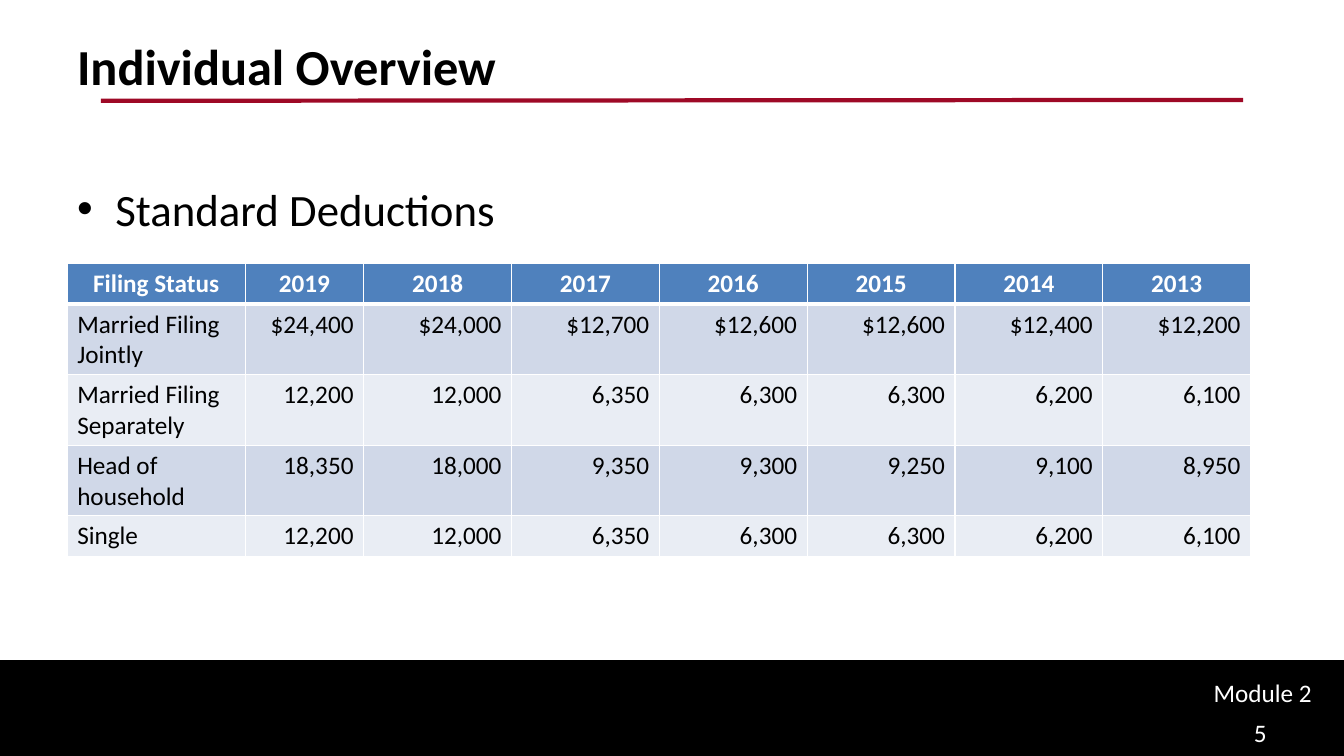
"""Builds the Individual Overview slide with its standard deduction table."""
import dataclasses

import pptx
import pptx.dml.color
import pptx.enum.shapes
import pptx.enum.text
import pptx.oxml
import pptx.oxml.ns
import pptx.util

GRID_COLUMNS, GRID_ROWS = 160, 90
SLIDE_WIDTH, SLIDE_HEIGHT = pptx.util.Inches(13.33), pptx.util.Inches(7.5)
FONT = "Calibri"
BLACK, WHITE, CRIMSON, HEADER_BLUE = "000000", "FFFFFF", "9E0926", "4F81BD"
BANDS = ("D0D8E8", "E9EDF4")
ALIGN = pptx.enum.text.PP_ALIGN

DEDUCTIONS = (
    ("Filing Status", "2019", "2018", "2017", "2016", "2015", "2014", "2013"),
    ("Married Filing Jointly", "$24,400", "$24,000", "$12,700", "$12,600", "$12,600", "$12,400", "$12,200"),
    ("Married Filing Separately", "12,200", "12,000", "6,350", "6,300", "6,300", "6,200", "6,100"),
    ("Head of household", "18,350", "18,000", "9,350", "9,300", "9,250", "9,100", "8,950"),
    ("Single", "12,200", "12,000", "6,350", "6,300", "6,300", "6,200", "6,100"),
)
TABLE_COLUMNS = (21.2, 14.1) + (17.6,) * 6
TABLE_ROW = 4.9


@dataclasses.dataclass(frozen=True)
class Area:
    column: float
    row: float
    columns: float
    rows: float

    def box(self) -> tuple[int, int, int, int]:
        return across(self.column), down(self.row), across(self.columns), down(self.rows)


@dataclasses.dataclass(frozen=True)
class Label:
    text: str
    area: Area
    size: float
    colour: str = BLACK
    bold: bool = False
    bullet: bool = False


LABELS = (
    Label("Individual Overview", Area(8, 3.6, 144, 15), 36, bold=True),
    Label("Standard Deductions", Area(8, 21, 144, 51.5), 32, bullet=True),
    Label("Module 2", Area(143.3, 80, 15.8, 4.8), 18, WHITE),
    Label("5", Area(148.1, 84.8, 10.9, 5.2), 18, WHITE),
)


def across(columns: float) -> int:
    return round(SLIDE_WIDTH * columns / GRID_COLUMNS)


def down(rows: float) -> int:
    return round(SLIDE_HEIGHT * rows / GRID_ROWS)


def paint(colour_format, colour: str) -> None:
    colour_format.rgb = pptx.dml.color.RGBColor.from_string(colour)


def paint_fill(fill, colour: str) -> None:
    fill.solid()
    paint(fill.fore_color, colour)


def style_text(paragraph, size: float, colour: str, bold: bool) -> None:
    for run in paragraph.runs:
        run.font.name = FONT
        run.font.size = pptx.util.Pt(size)
        run.font.bold = bold
        paint(run.font.color, colour)


def add_bullet(paragraph) -> None:
    properties = paragraph._p.get_or_add_pPr()
    indent = pptx.util.Inches(0.38)
    properties.set("marL", str(indent))
    properties.set("indent", str(-indent))
    namespace = pptx.oxml.ns.nsdecls("a")
    properties.append(pptx.oxml.parse_xml(f'<a:buFont {namespace} typeface="Arial"/>'))
    properties.append(pptx.oxml.parse_xml(f'<a:buChar {namespace} char="•"/>'))


def add_label(slide, label: Label) -> None:
    frame = slide.shapes.add_textbox(*label.area.box()).text_frame
    frame.word_wrap = True
    frame.text = label.text
    if label.bullet:
        add_bullet(frame.paragraphs[0])
    style_text(frame.paragraphs[0], label.size, label.colour, label.bold)


def add_footer_band(slide) -> None:
    band = slide.shapes.add_shape(
        pptx.enum.shapes.MSO_SHAPE.RECTANGLE, *Area(0, 78.75, GRID_COLUMNS, 11.25).box())
    band.shadow.inherit = False
    paint_fill(band.fill, BLACK)
    paint(band.line.color, BLACK)
    band.line.width = pptx.util.Pt(2)


def add_title_rule(slide) -> None:
    rule = slide.shapes.add_connector(
        pptx.enum.shapes.MSO_CONNECTOR.STRAIGHT, across(12), down(12), across(148), down(11.9))
    paint(rule.line.color, CRIMSON)
    rule.line.width = pptx.util.Pt(3)
    rule._element.spPr.append(
        pptx.oxml.parse_xml(f'<a:effectLst {pptx.oxml.ns.nsdecls("a")}/>'))


def add_borders(cell, top: float, bottom: float) -> None:
    properties = cell._tc.get_or_add_tcPr()
    for side, points in (("L", 1), ("R", 1), ("T", top), ("B", bottom)):
        properties.append(pptx.oxml.parse_xml(
            f'<a:ln{side} {pptx.oxml.ns.nsdecls("a")} w="{pptx.util.Pt(points)}">'
            f'<a:solidFill><a:srgbClr val="{WHITE}"/></a:solidFill></a:ln{side}>'))


def fill_cell(cell, text: str, row: int, column: int) -> None:
    header = row == 0
    add_borders(cell, top=3 if row == 1 else 1, bottom=3 if header else 1)
    paint_fill(cell.fill, HEADER_BLUE if header else BANDS[(row - 1) % 2])
    cell.text_frame.text = text
    paragraph = cell.text_frame.paragraphs[0]
    style_text(paragraph, 18, WHITE if header else BLACK, header)
    if header:
        paragraph.alignment = ALIGN.CENTER
        cell.vertical_anchor = pptx.enum.text.MSO_ANCHOR.BOTTOM
    else:
        paragraph.alignment = ALIGN.RIGHT if column else ALIGN.LEFT


def add_deductions(slide) -> None:
    area = Area(8, 31.3, sum(TABLE_COLUMNS), TABLE_ROW * len(DEDUCTIONS))
    table = slide.shapes.add_table(len(DEDUCTIONS), len(TABLE_COLUMNS), *area.box()).table
    table.horz_banding = False
    for table_column, columns in zip(table.columns, TABLE_COLUMNS):
        table_column.width = across(columns)
    for row, values in enumerate(DEDUCTIONS):
        for column, text in enumerate(values):
            fill_cell(table.cell(row, column), text, row, column)


def main() -> None:
    presentation = pptx.Presentation()
    presentation.slide_width, presentation.slide_height = SLIDE_WIDTH, SLIDE_HEIGHT
    slide = presentation.slides.add_slide(presentation.slide_layouts[6])
    paint_fill(slide.background.fill, WHITE)
    add_footer_band(slide)
    add_title_rule(slide)
    for label in LABELS:
        add_label(slide, label)
    add_deductions(slide)
    presentation.save("out.pptx")


if __name__ == "__main__":
    main()
